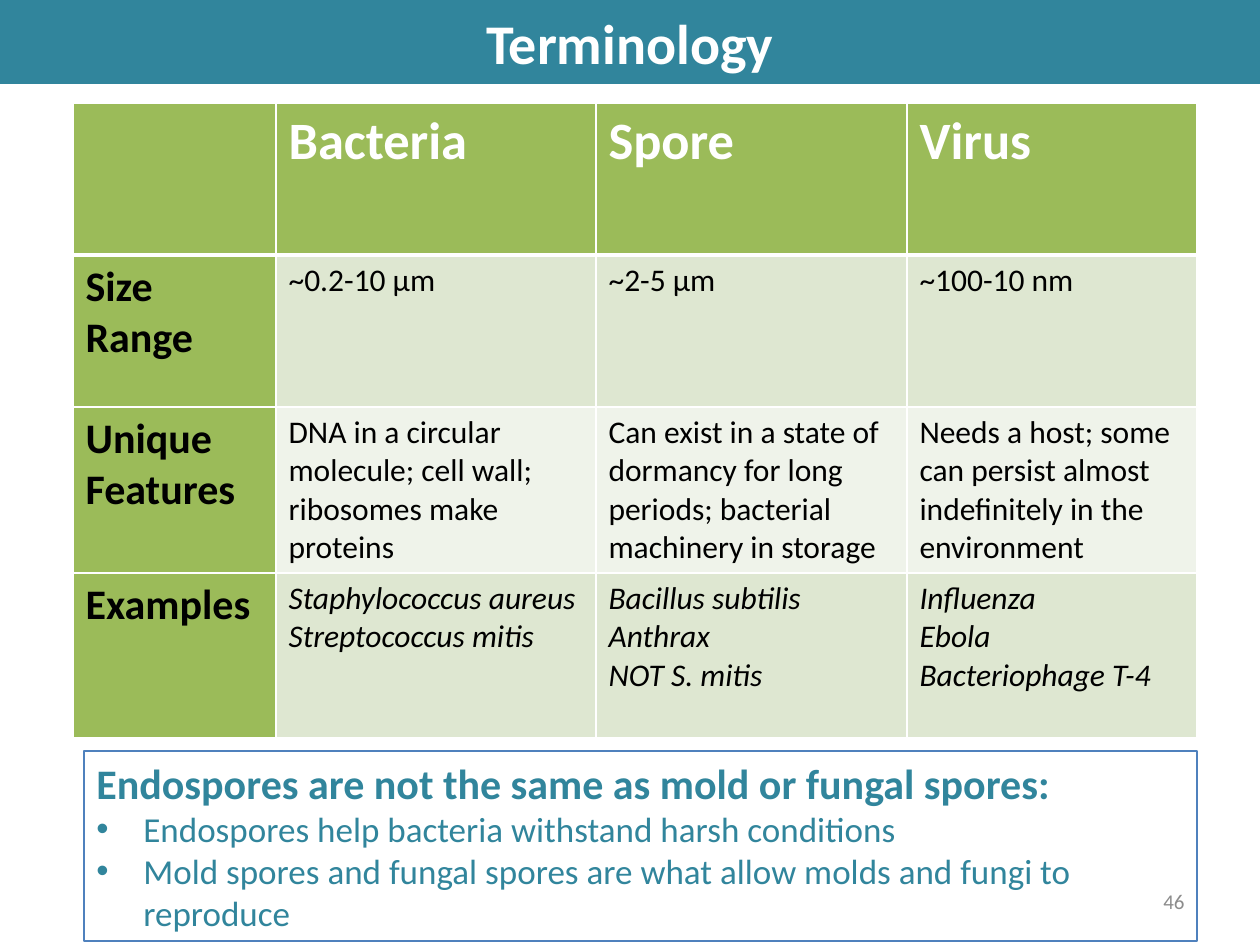
from dataclasses import dataclass

from lxml.etree import SubElement
from pptx import Presentation
from pptx.dml.color import RGBColor
from pptx.enum.shapes import MSO_SHAPE as Shape
from pptx.enum.text import MSO_ANCHOR as Anchor, PP_ALIGN as Align
from pptx.oxml.ns import qn
from pptx.util import Emu, Pt

PX_PER_INCH = 126
EMU_PER_INCH = 914400


def px(length):
    return Emu(round(length * EMU_PER_INCH / PX_PER_INCH))


@dataclass(frozen=True)
class Theme:
    font: str = "Calibri"
    teal: str = "31859C"
    green: str = "9BBB59"
    bands: tuple = ("DEE7D1", "EFF3EA")
    outline: str = "4F81BD"
    white: str = "FFFFFF"
    black: str = "000000"
    gray: str = "8C8C8C"
    title: int = 32
    column_head: int = 30
    heading: int = 24
    bullet: int = 20
    body: int = 18
    number: int = 12


class SlideBuilder:
    """Draws styled elements on the current slide."""

    def __init__(self, page, theme):
        self.page = page
        self.theme = theme

    def format(self, para, size, color, bold=False, italic=False):
        for span in para.runs:
            font = span.font
            font.name = self.theme.font
            font.size = Pt(size)
            font.bold = bold
            font.italic = italic
            font.color.rgb = RGBColor.from_string(color)

    def rectangle(self, area, fill=None, line=None):
        box = self.page.shapes.add_shape(Shape.RECTANGLE, *map(px, area))
        box.shadow.inherit = False
        if fill:
            box.fill.solid()
            box.fill.fore_color.rgb = RGBColor.from_string(fill)
        else:
            box.fill.background()
        if line:
            box.line.color.rgb = RGBColor.from_string(line)
            box.line.width = Pt(0.75)
        else:
            box.line.fill.background()
        return box

    def banner(self, area, text):
        box = self.rectangle(area, fill=self.theme.teal)
        box.text_frame.text = text
        box.text_frame.vertical_anchor = Anchor.MIDDLE
        para = box.text_frame.paragraphs[0]
        para.alignment = Align.CENTER
        self.format(para, self.theme.title, self.theme.white, bold=True)

    def page_number(self, area, text):
        frame = self.page.shapes.add_textbox(*map(px, area)).text_frame
        frame.word_wrap = True
        frame.text = text
        frame.vertical_anchor = Anchor.MIDDLE
        para = frame.paragraphs[0]
        para.alignment = Align.RIGHT
        self.format(para, self.theme.number, self.theme.gray)

    def borders(self, cell, bottom):
        properties = cell._tc.get_or_add_tcPr()
        for side, width in (("L", 1), ("R", 1), ("T", 1), ("B", bottom)):
            line = SubElement(properties, qn(f"a:ln{side}"), w=str(Pt(width)))
            fill = SubElement(line, qn("a:solidFill"))
            SubElement(fill, qn("a:srgbClr"), val=self.theme.white)

    def cell_style(self, row, column, last_row):
        theme = self.theme
        if row == 0:
            return theme.green, (theme.column_head, theme.white, True)
        if column == 0:
            return theme.green, (theme.heading, theme.black, True)
        return theme.bands[(row - 1) % 2], (theme.body, theme.black, False, row == last_row)

    def table(self, left, top, widths, heights, rows):
        area = map(px, (left, top, sum(widths), sum(heights)))
        table = self.page.shapes.add_table(len(heights), len(widths), *area).table
        for column, width in zip(table.columns, widths):
            column.width = px(width)
        for row, height in zip(table.rows, heights):
            row.height = px(height)
        for r, texts in enumerate(rows):
            for c, text in enumerate(texts):
                cell = table.cell(r, c)
                fill, style = self.cell_style(r, c, len(rows) - 1)
                self.borders(cell, bottom=3 if r == 0 else 1)
                cell.fill.solid()
                cell.fill.fore_color.rgb = RGBColor.from_string(fill)
                cell.text_frame.text = text
                for para in cell.text_frame.paragraphs:
                    self.format(para, *style)

    def note(self, area, heading, bullets):
        frame = self.rectangle(area, line=self.theme.outline).text_frame
        frame.vertical_anchor = Anchor.TOP
        frame.text = "\n".join([heading, *bullets])
        first, *others = frame.paragraphs
        first.alignment = Align.LEFT
        self.format(first, self.theme.heading, self.theme.teal, bold=True)
        for para in others:
            para.alignment = Align.LEFT
            self.format(para, self.theme.bullet, self.theme.teal)
            properties = para._p.get_or_add_pPr()
            properties.set("marL", str(px(47)))
            properties.set("indent", str(px(-47)))
            SubElement(properties, qn("a:buFont"), typeface="Arial")
            SubElement(properties, qn("a:buChar"), char="•")


def main():
    deck = Presentation()
    deck.slide_width, deck.slide_height = px(1260), px(945)
    builder = SlideBuilder(deck.slides.add_slide(deck.slide_layouts[6]), Theme())

    builder.banner((0, 0, 1260, 84), "Terminology")
    builder.page_number((903, 876, 294, 50), "46")
    builder.table(
        73, 103, (203, 320, 311, 290), (152, 152, 166, 165),
        [
            ("", "Bacteria", "Spore", "Virus"),
            ("Size Range", "~0.2-10 µm", "~2-5 µm", "~100-10 nm"),
            (
                "Unique Features",
                "DNA in a circular molecule; cell wall; ribosomes make proteins",
                "Can exist in a state of dormancy for long periods; "
                "bacterial machinery in storage",
                "Needs a host; some can persist almost indefinitely in the environment",
            ),
            (
                "Examples",
                "Staphylococcus aureus\nStreptococcus mitis",
                "Bacillus subtilis\nAnthrax\nNOT S. mitis",
                "Influenza\nEbola\nBacteriophage T-4",
            ),
        ],
    )
    builder.note(
        (84, 751, 1113, 190),
        "Endospores are not the same as mold or fungal spores:",
        [
            "Endospores help bacteria withstand harsh conditions",
            "Mold spores and fungal spores are what allow molds and fungi to reproduce",
        ],
    )
    deck.save("out.pptx")


if __name__ == "__main__":
    main()
